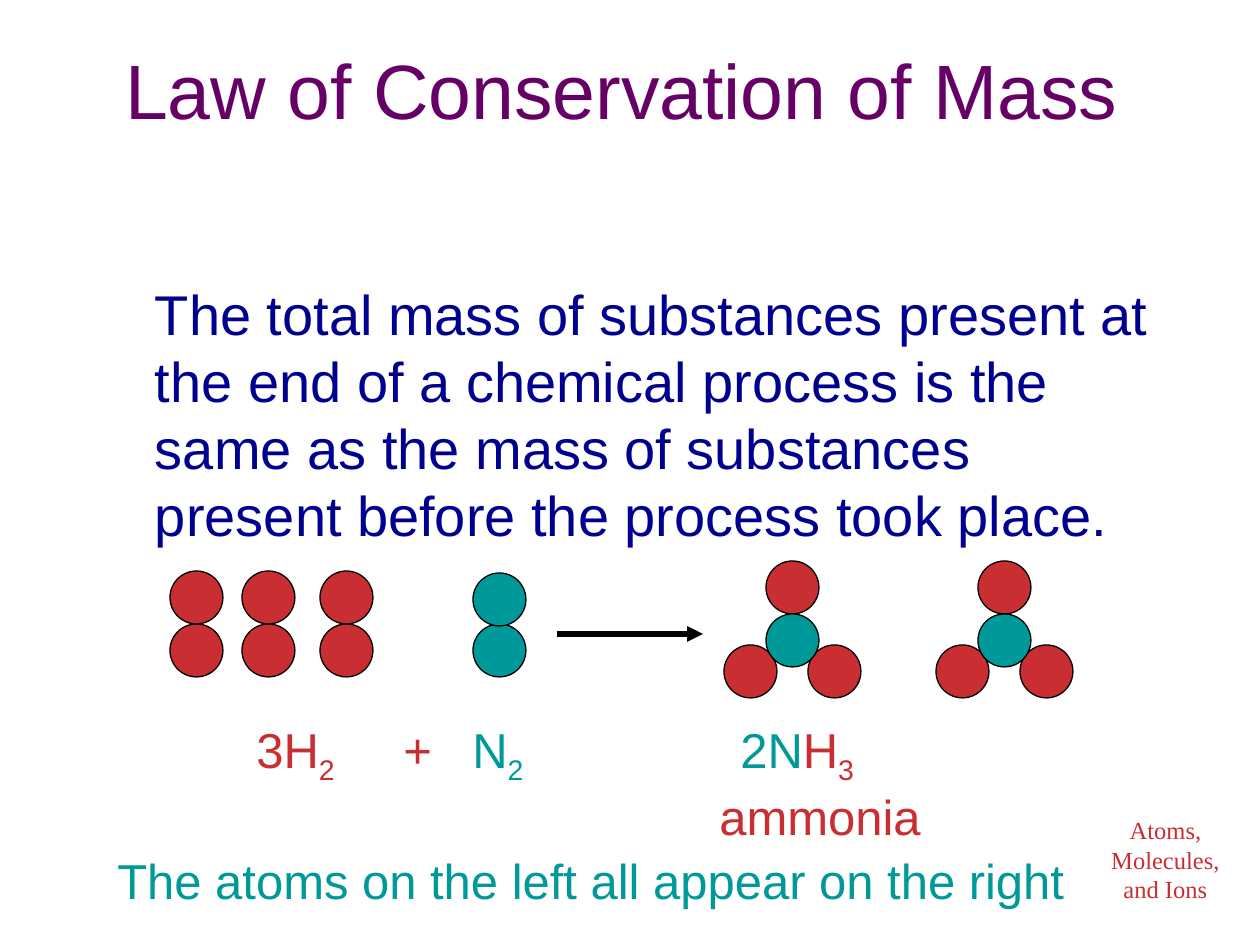
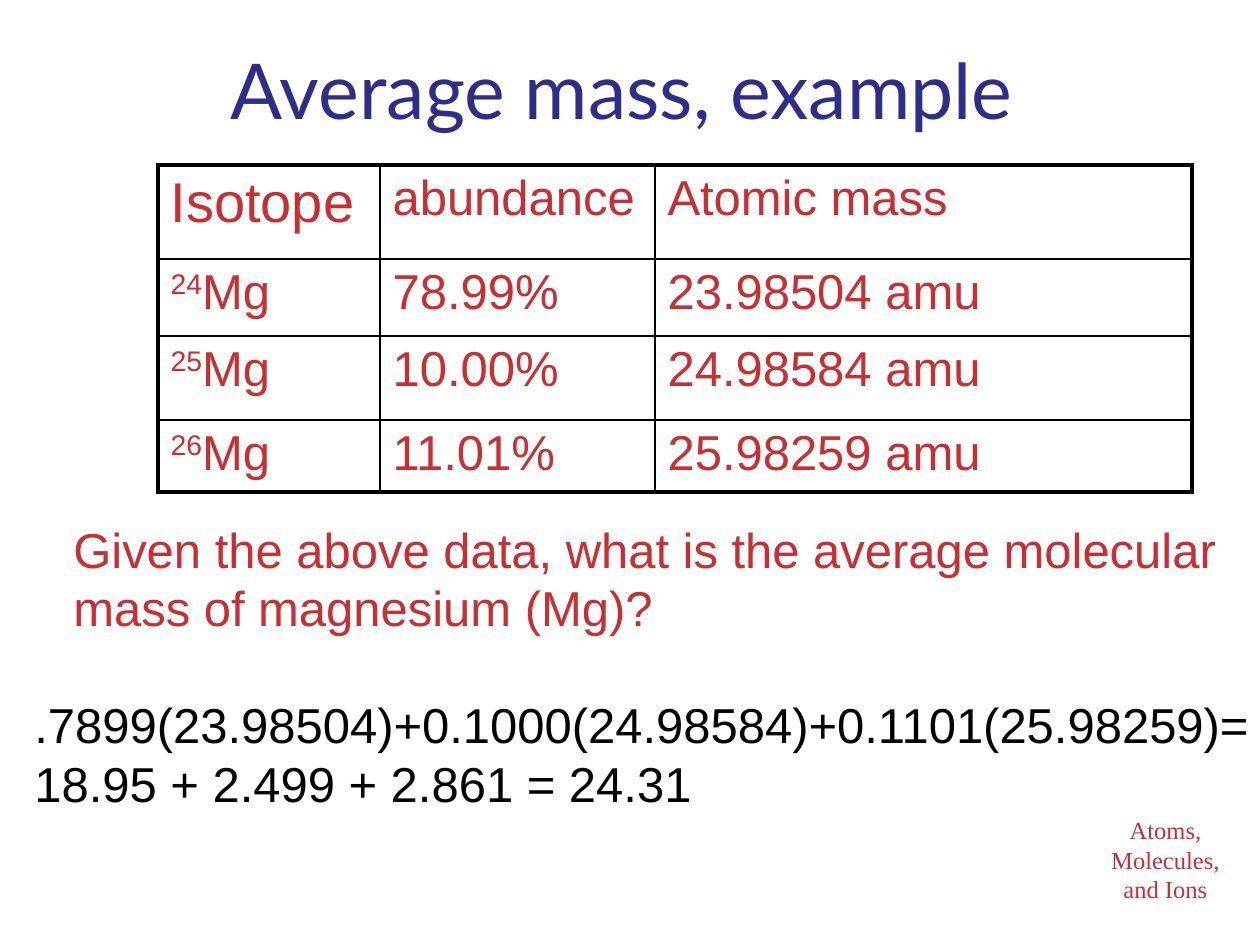
"""Build two chemistry slides: conservation of mass and average atomic mass."""
import dataclasses

import lxml.etree
import pptx
import pptx.dml.color
import pptx.enum.shapes
import pptx.enum.text
import pptx.oxml.ns
import pptx.util

EMU_PER_PX = 914400 / 126
ALIGN = pptx.enum.text.PP_ALIGN
ANCHOR = pptx.enum.text.MSO_ANCHOR
SUBSCRIPT, SUPERSCRIPT = -25000, 30000


@dataclasses.dataclass(frozen=True)
class Theme:
    """Colours, fonts and type sizes of the deck."""
    red: str = "C82E32"
    teal: str = "009999"
    purple: str = "660066"
    indigo: str = "2D2D8A"
    navy: str = "000090"
    black: str = "000000"
    sans: str = "Arial"
    humanist: str = "Lato"
    serif: str = "Times New Roman"
    title_size: int = 44
    lead_size: int = 32
    text_size: int = 28
    footer_size: int = 14
    thin: float = 1
    thick: float = 2.25


THEME = Theme()
ATOM = 53


def px(length):
    """Turn px into EMU."""
    return pptx.util.Emu(round(length * EMU_PER_PX))


def rgb(colour):
    """Turn a hex string into a colour."""
    return pptx.dml.color.RGBColor.from_string(colour)


def add_xml(parent, tag, **attributes):
    """Append a DrawingML child element and return it."""
    return lxml.etree.SubElement(parent, pptx.oxml.ns.qn(tag), attributes)


def add_run(paragraph, text, colour, size=THEME.text_size, font=THEME.sans, baseline=0):
    """Add one styled run, raised or lowered by its baseline."""
    run = paragraph.add_run()
    run.text = text
    run.font.size = pptx.util.Pt(size)
    run.font.name = font
    run.font.color.rgb = rgb(colour)
    if baseline:
        run.font._element.set("baseline", str(baseline))


def add_frame(slide, box, wrap=True, anchor=ANCHOR.TOP):
    """Add an empty text box and return its text frame."""
    frame = slide.shapes.add_textbox(*map(px, box)).text_frame
    frame.word_wrap = wrap
    frame.vertical_anchor = anchor
    return frame


def next_paragraph(frame, index):
    """Return the first paragraph of a frame, or a new one after it."""
    return frame.add_paragraph() if index else frame.paragraphs[0]


def add_lines(slide, box, lines, colour, size=THEME.text_size, font=THEME.sans,
              align=ALIGN.LEFT, wrap=True, anchor=ANCHOR.TOP):
    """Add a text box with one paragraph for each line."""
    frame = add_frame(slide, box, wrap, anchor)
    for index, line in enumerate(lines):
        paragraph = next_paragraph(frame, index)
        paragraph.alignment = align
        add_run(paragraph, line, colour, size, font)
    return frame


def add_tabbed_lines(slide, box, lines):
    """Add lines of (tab stops, runs), the runs being (text, colour, baseline)."""
    frame = add_frame(slide, box)
    for index, (stops, runs) in enumerate(lines):
        paragraph = next_paragraph(frame, index)
        tab_list = add_xml(paragraph._p.get_or_add_pPr(), "a:tabLst")
        for stop in stops:
            add_xml(tab_list, "a:tab", pos=str(px(stop)), algn="l")
        for text, colour, baseline in runs:
            add_run(paragraph, text, colour, baseline=baseline)


def start_slide(deck, title, colour, font):
    """Add a blank slide with the chapter footer and a title."""
    slide = deck.slides.add_slide(deck.slide_layouts[6])
    add_lines(slide, (1085, 809, 161, 101), ("Atoms,", "Molecules,", "and Ions"),
              THEME.red, THEME.footer_size, THEME.serif, ALIGN.CENTER)
    add_lines(slide, (87, 10, 1070, 158), (title,), colour, THEME.title_size, font,
              ALIGN.CENTER, anchor=ANCHOR.MIDDLE)
    return slide


def add_atom(slide, left, top, colour):
    """Add one atom as an outlined disc."""
    atom = slide.shapes.add_shape(pptx.enum.shapes.MSO_SHAPE.OVAL,
                                  *map(px, (left, top, ATOM, ATOM)))
    atom.shadow.inherit = False
    atom.fill.solid()
    atom.fill.fore_color.rgb = rgb(colour)
    atom.line.color.rgb = rgb(THEME.black)
    atom.line.width = pptx.util.Pt(0.75)


def add_diatomic(slide, left, top, colour, rise=ATOM):
    """Add two equal atoms, one above the other."""
    add_atom(slide, left, top, colour)
    add_atom(slide, left, top - rise, colour)


def add_ammonia(slide, left, top):
    """Add three hydrogens around a nitrogen."""
    for across, down in ((0, -ATOM), (-42, 31), (42, 31)):
        add_atom(slide, left + across, top + down, THEME.red)
    add_atom(slide, left, top, THEME.teal)


def add_reaction_arrow(slide, start, end, level):
    """Add a horizontal arrow from reactants to product."""
    arrow = slide.shapes.add_connector(pptx.enum.shapes.MSO_CONNECTOR.STRAIGHT,
                                       *map(px, (start, level, end, level)))
    arrow.line.color.rgb = rgb(THEME.black)
    arrow.line.width = pptx.util.Pt(3)
    add_xml(arrow.line._get_or_add_ln(), "a:tailEnd", type="triangle")
    add_xml(arrow._element.spPr, "a:effectLst")


def set_borders(cell, widths):
    """Draw the left, right, top and bottom borders of a cell."""
    properties = cell._tc.get_or_add_tcPr()
    for index, (side, width) in enumerate(zip("LRTB", widths)):
        border = add_xml(properties, f"a:ln{side}", w=str(pptx.util.Pt(width)))
        fill = add_xml(border, "a:solidFill")
        add_xml(fill, "a:srgbClr", val=THEME.black)
        properties.insert(index, border)


def add_isotope_table(slide, left, top, widths, heights, rows):
    """Add a table of runs with a thick frame and thin inner lines."""
    table = slide.shapes.add_table(len(rows), len(widths), *map(
        px, (left, top, sum(widths), sum(heights)))).table
    table.first_row = table.horz_banding = False
    for column, width in zip(table.columns, widths):
        column.width = px(width)
    for row, height in zip(table.rows, heights):
        row.height = px(height)
    last_row, last_column = len(rows) - 1, len(widths) - 1
    for r, row in enumerate(rows):
        for c, runs in enumerate(row):
            cell = table.cell(r, c)
            cell.fill.background()
            on_frame = (c == 0, c == last_column, r == 0, r == last_row)
            set_borders(cell, [THEME.thick if edge else THEME.thin for edge in on_frame])
            for text, size, baseline in runs:
                add_run(cell.text_frame.paragraphs[0], text, THEME.red, size,
                        baseline=baseline)


def build_conservation(deck):
    """Build the slide on the law of conservation of mass."""
    slide = start_slide(deck, "Law of Conservation of Mass", THEME.purple, THEME.sans)
    law = add_lines(
        slide, (94, 273, 1071, 336),
        ("The total mass of substances present at the end of a chemical process is "
         "the same as the mass of substances present before the process took place.",),
        THEME.navy, THEME.lead_size)
    law.margin_left = px(61)
    for hydrogen_left in (170, 242, 320):
        add_diatomic(slide, hydrogen_left, 624, THEME.red)
    add_diatomic(slide, 473, 624, THEME.teal, rise=51)
    add_reaction_arrow(slide, 557, 703, 634)
    for ammonia_left in (766, 978):
        add_ammonia(slide, ammonia_left, 614)
    red, teal = THEME.red, THEME.teal
    equation = (("3H", red, 0), ("2", red, SUBSCRIPT), ("\t+\t", red, 0),
                ("N", teal, 0), ("2", teal, SUBSCRIPT), ("\t2N", teal, 0),
                ("H", red, 0), ("3", red, SUBSCRIPT))
    add_tabbed_lines(slide, (244, 713, 771, 130),
                     (((147, 216, 484), equation), ((463,), (("\tammonia", red, 0),))))
    add_lines(slide, (105, 844, 973, 72),
              ("The atoms on the left all appear on the right",), teal, wrap=False)


def build_average_mass(deck):
    """Build the slide on the average mass of magnesium."""
    slide = start_slide(deck, "Average mass, example", THEME.indigo, THEME.humanist)
    size = THEME.text_size
    rows = [(
        [("Isotope", THEME.lead_size, 0)], [("abundance", size, 0)],
        [("Atomic mass", size, 0)])]
    for number, abundance, mass in (("24", "78.99%", "23.98504 amu"),
                                    ("25", "10.00%", "24.98584 amu"),
                                    ("26", "11.01%", "25.98259 amu")):
        rows.append(([(number, size, SUPERSCRIPT), ("Mg", size, 0)],
                     [(abundance, size, 0)], [(mass, size, 0)]))
    add_isotope_table(slide, 158, 165, (222, 275, 537), (94, 77, 84, 72), rows)
    add_lines(slide, (61, 513, 1169, 130),
              ("Given the above data, what is the average molecular mass of "
               "magnesium (Mg)?",), THEME.red)
    add_lines(slide, (22, 688, 1245, 130),
              (".7899(23.98504)+0.1000(24.98584)+0.1101(25.98259)=",
               "18.95 + 2.499 + 2.861 = 24.31"), THEME.black, wrap=False)


def main():
    """Build and save the deck."""
    deck = pptx.Presentation()
    deck.slide_width, deck.slide_height = px(1260), px(945)
    build_conservation(deck)
    build_average_mass(deck)
    deck.save("out.pptx")


if __name__ == "__main__":
    main()
